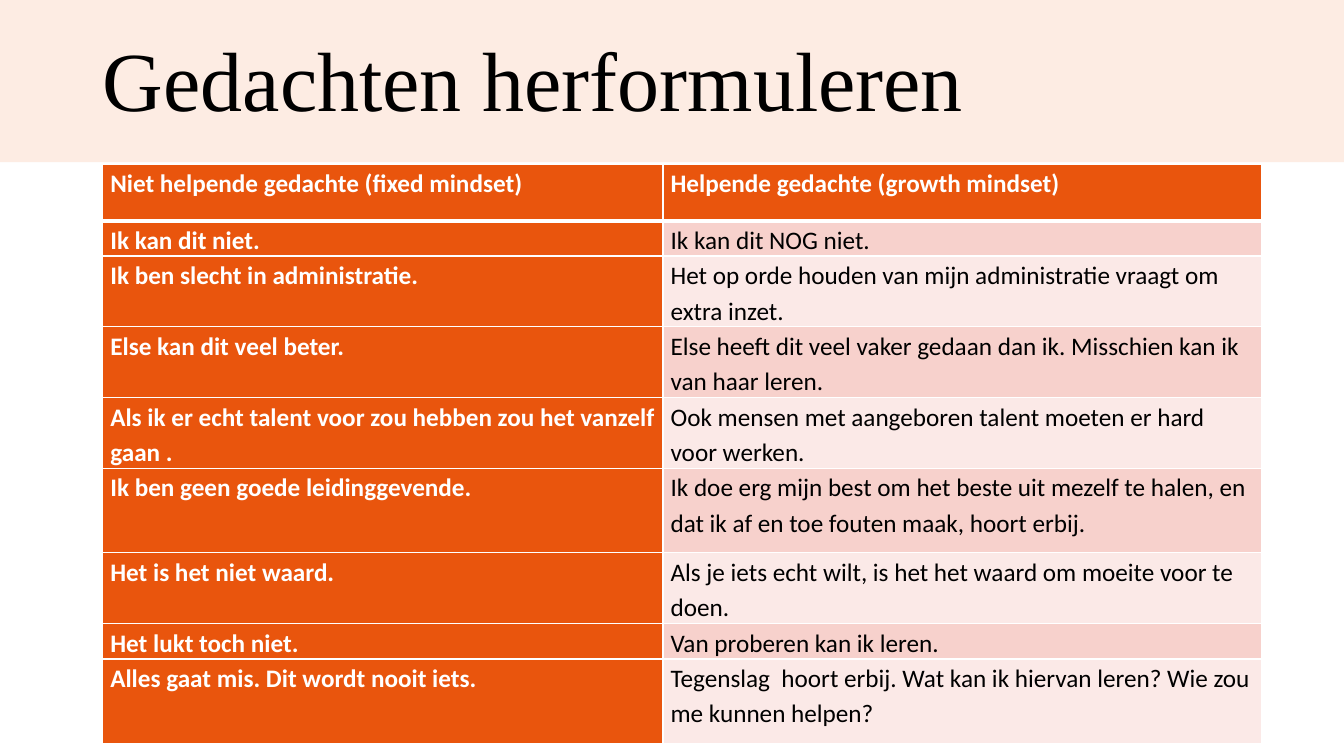
from lxml.etree import SubElement
from pptx import Presentation
from pptx.dml.color import RGBColor
from pptx.enum.shapes import MSO_SHAPE
from pptx.enum.text import MSO_ANCHOR, MSO_AUTO_SIZE, PP_ALIGN
from pptx.oxml.ns import qn
from pptx.util import Cm, Pt

PEACH = RGBColor(0xFD, 0xEC, 0xE3)
ORANGE = RGBColor(0xE9, 0x55, 0x0D)
ROSE = RGBColor(0xF7, 0xD1, 0xCC)
BLUSH = RGBColor(0xFB, 0xE9, 0xE7)
WHITE = RGBColor(0xFF, 0xFF, 0xFF)
BLACK = RGBColor(0x00, 0x00, 0x00)

ROWS = [
    # height in cm, fixed mindset, growth mindset
    (1.42, "Niet helpende gedachte (fixed mindset)",
     "Helpende gedachte (growth mindset)"),
    (0.71, "Ik kan dit niet.", "Ik kan dit NOG niet."),
    (1.42, "Ik ben slecht in administratie.",
     "Het op orde houden van mijn administratie vraagt om extra inzet."),
    (1.42, "Else kan dit veel beter.",
     "Else heeft dit veel vaker gedaan dan ik. Misschien kan ik van haar leren."),
    (1.42, "Als ik er echt talent voor zou hebben zou het vanzelf gaan .",
     "Ook mensen met aangeboren talent moeten er hard voor werken."),
    (2.13, "Ik ben geen goede leidinggevende.",
     "Ik doe erg mijn best om het beste uit mezelf te halen, "
     "en dat ik af en toe fouten maak, hoort erbij."),
    (1.42, "Het is het niet waard.",
     "Als je iets echt wilt, is het het waard om moeite voor te doen."),
    (0.71, "Het lukt toch niet.", "Van proberen kan ik leren."),
    (2.13, "Alles gaat mis. Dit wordt nooit iets.",
     "Tegenslag  hoort erbij. Wat kan ik hiervan leren? Wie zou me kunnen helpen?"),
]


def add_edge(cell, side, width):
    line = SubElement(cell._tc.get_or_add_tcPr(), qn("a:" + side), w=str(Pt(width)))
    fill = SubElement(line, qn("a:solidFill"))
    SubElement(fill, qn("a:srgbClr"), val=str(WHITE))


deck = Presentation()
deck.slide_width, deck.slide_height = Cm(33.87), Cm(19.05)
slide = deck.slides.add_slide(deck.slide_layouts[5])

# Title
title = slide.shapes.title
title.left, title.top, title.width, title.height = Cm(2.34), Cm(1.04), Cm(25.22), Cm(2.16)
frame = title.text_frame
frame.text = "Gedachten herformuleren"
frame.auto_size = MSO_AUTO_SIZE.NONE
frame.vertical_anchor = MSO_ANCHOR.MIDDLE
head = frame.paragraphs[0]
head.alignment = PP_ALIGN.LEFT
head.line_spacing = 0.9
font = head.runs[0].font
font.name, font.size = "Times New Roman", Pt(60)
font.color.rgb = BLACK

# Band behind the title
band = slide.shapes.add_shape(MSO_SHAPE.RECTANGLE, 0, 0, deck.slide_width, Cm(4.09))
band.shadow.inherit = False
band.fill.solid()
band.fill.fore_color.rgb = PEACH
band.line.fill.background()
title.element.addprevious(band.element)

# Table of thoughts
table = slide.shapes.add_table(len(ROWS), 2, Cm(2.59), Cm(4.14), Cm(29.21), Cm(14.27)).table
table.columns[0].width, table.columns[1].width = Cm(14.12), Cm(15.09)

for r, (height, *texts) in enumerate(ROWS):
    table.rows[r].height = Cm(height)
    for c, text in enumerate(texts):
        cell = table.cell(r, c)
        strong = r == 0 or c == 0

        # Borders and fill, with a thick rule under the header
        add_edge(cell, "lnL", 1)
        add_edge(cell, "lnR", 1)
        add_edge(cell, "lnT", 3 if r == 1 else 1)
        add_edge(cell, "lnB", 3 if r == 0 else 1)
        cell.fill.solid()
        cell.fill.fore_color.rgb = ORANGE if strong else ROSE if r % 2 else BLUSH

        # Text
        cell.margin_left = cell.margin_right = Cm(0.19)
        cell.margin_top = cell.margin_bottom = 0
        cell.text_frame.text = text
        para = cell.text_frame.paragraphs[0]
        para.line_spacing, para.space_after = 1.15, Pt(10)
        font = para.runs[0].font
        font.name, font.size, font.bold = "Calibri", Pt(18), strong
        font.color.rgb = WHITE if strong else BLACK

deck.save("out.pptx")
